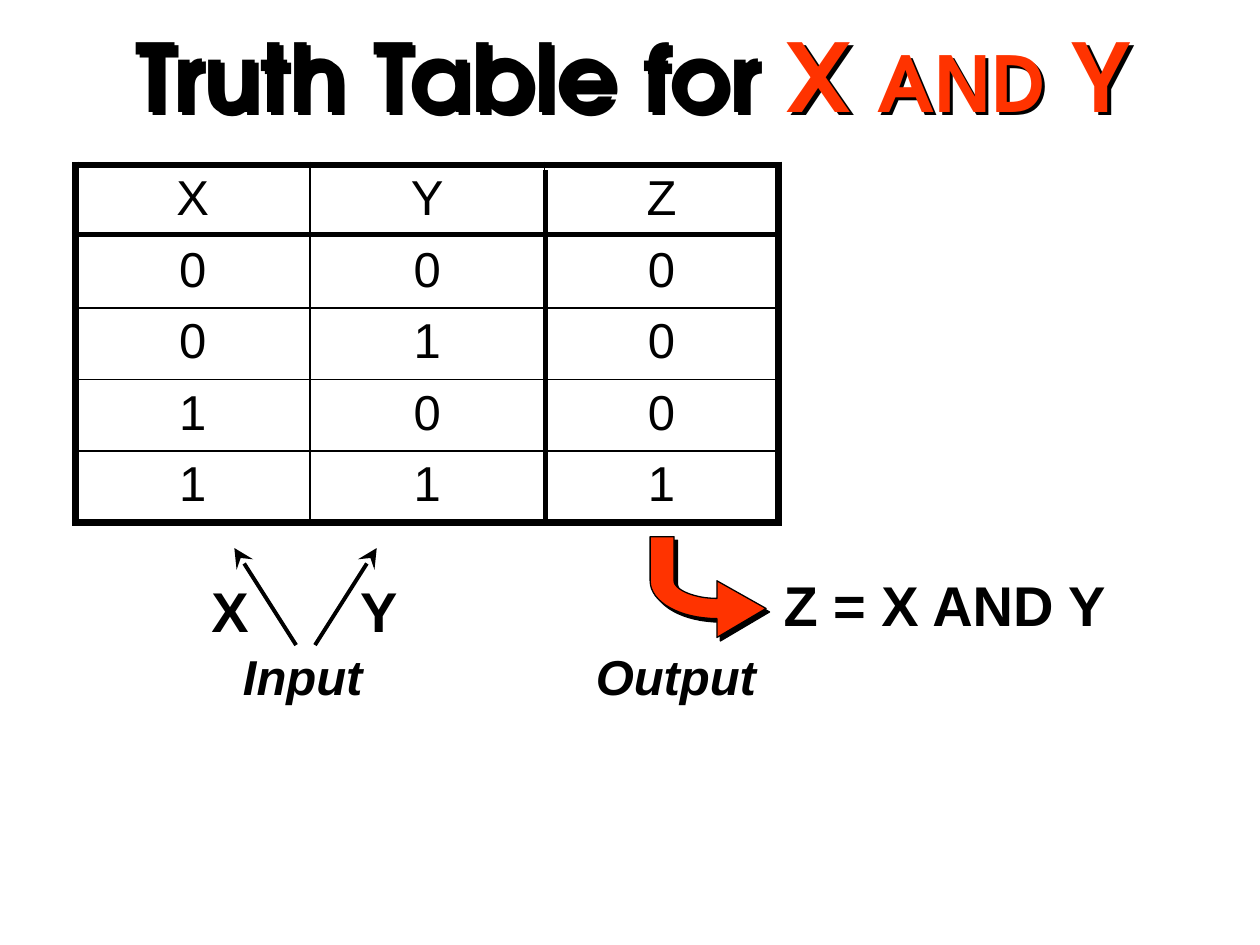
import pptx
import pptx.util
import pptx.dml.color
import pptx.enum.shapes
import pptx.enum.text
import pptx.oxml
from lxml import etree
from pptx.oxml.ns import nsdecls, qn

Inches, Pt = pptx.util.Inches, pptx.util.Pt
CENTER = pptx.enum.text.PP_ALIGN.CENTER
HUES = {"ink": "000000", "accent": "FF3300"}

TITLE = [("Truth Table for ", 54, "ink"), ("X ", 54, "accent"),
         ("AND", 44, "accent"), (" Y", 54, "accent")]
ROWS = ["XYZ", "000", "010", "100", "111"]
TABLE = (0.6, 1.31, 5.58, 2.83)
# text, left, top, width, height, size, italic
LABELS = [
    ("Z = X AND Y", 6.12, 4.48, 2.78, 0.63, 32, False),
    ("Output", 4.63, 5.08, 1.48, 0.57, 28, True),
    ("Input", 1.83, 5.08, 1.15, 0.57, 28, True),
    ("X", 1.58, 4.53, 0.5, 0.63, 32, False),
    ("Y", 2.76, 4.53, 0.5, 0.63, 32, False),
]
# start x, y, end x, y, width, arrowhead
LINES = [
    (4.33, 1.35, 4.33, 4.13, 3, False),
    (0.6, 1.86, 6.17, 1.86, 2.25, False),
    (2.35, 5.12, 1.86, 4.35, 2.25, True),
    (2.5, 5.12, 2.99, 4.35, 2.25, True),
]


def color(name):
    return pptx.dml.color.RGBColor.from_string(HUES[name])


def style(font, size, hue="ink", face="Arial", bold=True, italic=False):
    font.size, font.name = Pt(size), face
    font.bold, font.italic = bold, italic
    font.color.rgb = color(hue)


def cast(shape):
    """Give the shape a hard shadow to the lower right."""
    shape._element.spPr.append(pptx.oxml.parse_xml(
        f'<a:effectLst {nsdecls("a")}><a:outerShdw dist="{Pt(2.8)}" '
        f'dir="2700000" algn="ctr" rotWithShape="0">'
        f'<a:srgbClr val="{HUES["ink"]}"/></a:outerShdw></a:effectLst>'))


def add_title(slide):
    box = slide.shapes.add_textbox(*map(Inches, (0.39, 0.09, 9.27, 1)))
    box.text_frame.word_wrap = True
    para = box.text_frame.paragraphs[0]
    para.alignment = CENTER
    for text, size, hue in TITLE:
        run = para.add_run()
        run.text = text
        style(run.font, size, hue, "TeX Gyre Adventor")
    cast(box)


def add_border(cell, sides):
    props = cell._tc.get_or_add_tcPr()
    for side, width in sides.items():
        props.append(pptx.oxml.parse_xml(
            f'<a:ln{side} {nsdecls("a")} w="{Pt(width)}"><a:solidFill>'
            f'<a:srgbClr val="{HUES["ink"]}"/></a:solidFill></a:ln{side}>'))


def add_table(slide):
    high, wide = len(ROWS), len(ROWS[0])
    table = slide.shapes.add_table(high, wide, *map(Inches, TABLE)).table
    table.first_row = table.horz_banding = False
    for r, row in enumerate(ROWS):
        for c, text in enumerate(row):
            cell = table.cell(r, c)
            cell.text = text
            para = cell.text_frame.paragraphs[0]
            para.alignment = CENTER
            style(para.font, 28, bold=False)
            outer = {"L": c == 0, "R": c == wide - 1,
                     "T": r == 0, "B": r == high - 1}
            add_border(cell, {s: 4.5 if edge else 1
                              for s, edge in outer.items()})
            cell.fill.background()


def add_line(slide, x1, y1, x2, y2, width, head):
    line = slide.shapes.add_connector(
        pptx.enum.shapes.MSO_CONNECTOR.STRAIGHT,
        *map(Inches, (x1, y1, x2, y2)))
    line.line.color.rgb = color("ink")
    line.line.width = Pt(width)
    if head:
        etree.SubElement(line.line._get_or_add_ln(), qn("a:tailEnd"),
                         type="stealth", w="lg", len="lg")
    etree.SubElement(line._element.spPr, qn("a:effectLst"))


def curve(a, b, c, d, steps=16):
    """Points along a cubic Bezier, after its start."""
    for i in range(1, steps + 1):
        t = i / steps
        u = 1 - t
        yield tuple(u**3 * p + 3 * u * u * t * q + 3 * u * t * t * r + t**3 * s
                    for p, q, r, s in zip(a, b, c, d))


def add_arrow(slide):
    points = [(5.69, 5.06), (5.69, 4.91),
              *curve((5.69, 4.91), (5.4, 4.91), (5.16, 4.78), (5.16, 4.61)),
              (5.16, 4.26), (5.35, 4.26), (5.35, 4.61),
              *curve((5.35, 4.61), (5.35, 4.68), (5.51, 4.75), (5.69, 4.75)),
              (5.69, 4.61)]
    form = slide.shapes.build_freeform(Inches(6.08), Inches(4.83))
    form.add_line_segments([(Inches(x), Inches(y)) for x, y in points],
                           close=True)
    arrow = form.convert_to_shape()
    arrow.fill.solid()
    arrow.fill.fore_color.rgb = color("accent")
    arrow.line.color.rgb = color("ink")
    arrow.line.width = Pt(0.75)
    cast(arrow)


def add_label(slide, text, left, top, width, height, size, italic):
    box = slide.shapes.add_textbox(*map(Inches, (left, top, width, height)))
    box.text_frame.word_wrap = False
    para = box.text_frame.paragraphs[0]
    para.text = text
    style(para.font, size, italic=italic)


def main():
    deck = pptx.Presentation()
    deck.slide_width, deck.slide_height = Inches(10), Inches(7.5)
    slide = deck.slides.add_slide(deck.slide_layouts[6])
    add_title(slide)
    add_table(slide)
    add_arrow(slide)
    for line in LINES:
        add_line(slide, *line)
    for label in LABELS:
        add_label(slide, *label)
    deck.save("out.pptx")


if __name__ == "__main__":
    main()
